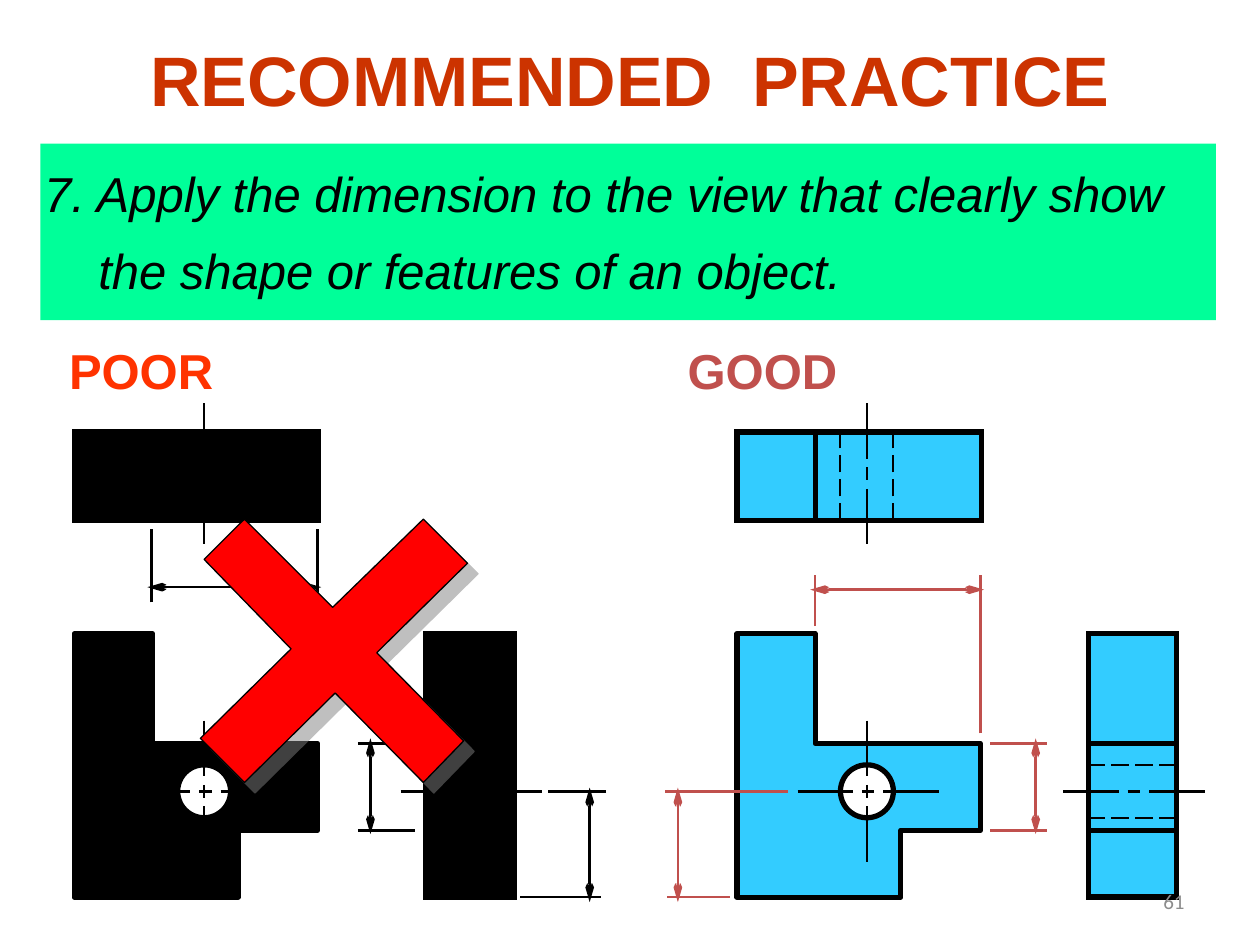
"""Build the slide that contrasts poor and good placement of dimensions."""
from dataclasses import dataclass
from typing import NamedTuple

from lxml.etree import SubElement
from pptx import Presentation
from pptx.dml.color import RGBColor
from pptx.enum.dml import MSO_LINE
from pptx.enum.shapes import MSO_CONNECTOR, MSO_SHAPE
from pptx.enum.text import MSO_ANCHOR, MSO_AUTO_SIZE, PP_ALIGN
from pptx.oxml.ns import qn
from pptx.util import Pt

PX = 9144


@dataclass(frozen=True)
class Theme:
    black: str = "000000"
    white: str = "FFFFFF"
    banner: str = "00FF99"
    workpiece: str = "33CCFF"
    title: str = "CC3300"
    poor: str = "FF3300"
    good: str = "C0504D"
    cross: str = "FF0000"
    shadow: str = "808080"
    number: str = "8C8C8C"
    font: str = "Arial"
    number_font: str = "Calibri"
    title_size: int = 40
    text_size: int = 28
    number_size: int = 12


class Box(NamedTuple):
    left: int
    top: int
    width: int
    height: int

    def emu(self, dx: int = 0) -> tuple:
        return (self.left + dx) * PX, self.top * PX, self.width * PX, self.height * PX


class Segment(NamedTuple):
    x1: int
    y1: int
    x2: int
    y2: int


class Pen(NamedTuple):
    color: str
    weight: float = 1.5
    dashed: bool = False
    arrows: bool = False


class Dimension(NamedTuple):
    measure: Segment
    extensions: tuple


class Lettering(NamedTuple):
    size: int
    color: str
    font: str
    bold: bool = False
    italic: bool = False


THEME = Theme()
EDGE = Pen(THEME.black, 3)
HIDDEN = Pen(THEME.black, 1.25, dashed=True)
CENTRE = Pen(THEME.black)

FRONT = ((59, 503), (121, 503), (121, 590), (252, 590), (252, 659),
         (189, 659), (189, 712), (59, 712))
PLAN = Box(59, 343, 194, 70)
SIDE = Box(338, 503, 70, 209)
HOLE = Box(141, 607, 42, 42)
GOOD_OFFSET = 526

EDGES = (Segment(121, 411, 121, 343), Segment(337, 590, 407, 590), Segment(337, 659, 407, 659))
HIDDEN_LINES = (Segment(337, 649, 407, 649), Segment(337, 607, 407, 607),
                Segment(183, 413, 183, 342), Segment(141, 413, 141, 342))
CENTRE_DASHES = ((-56, -12), (-5, 5), (12, 56))
HORIZONTAL_CENTRES = ((163, 628), (374, 628))
VERTICAL_CENTRES = ((162, 628), (162, 376))

POOR_DIMENSIONS = (
    Dimension(Segment(468, 625, 468, 716),
              (Segment(481, 628, 435, 628), Segment(477, 712, 413, 712))),
    Dimension(Segment(255, 466, 117, 466),
              (Segment(120, 478, 120, 420), Segment(252, 478, 252, 420))),
    Dimension(Segment(294, 586, 294, 662),
              (Segment(284, 590, 329, 590), Segment(284, 659, 329, 659))),
)
GOOD_DIMENSIONS = (
    Dimension(Segment(781, 468, 643, 468),
              (Segment(647, 497, 647, 456), Segment(778, 582, 778, 456))),
    Dimension(Segment(822, 586, 822, 662),
              (Segment(786, 590, 831, 590), Segment(786, 659, 831, 659))),
    Dimension(Segment(538, 625, 538, 716),
              (Segment(579, 712, 529, 712), Segment(625, 628, 528, 628))),
)
CROSS = ((162, 444), (231, 515), (159, 586), (194, 621), (266, 550), (336, 621),
         (368, 588), (299, 518), (371, 447), (336, 412), (264, 482), (194, 412))


def rgb(color: str) -> RGBColor:
    return RGBColor.from_string(color)


def paint(shape, fill: str, weight: float = 3, mitred: bool = False) -> None:
    shape.shadow.inherit = False
    shape.fill.solid()
    shape.fill.fore_color.rgb = rgb(fill)
    shape.line.color.rgb = rgb(THEME.black)
    shape.line.width = Pt(weight)
    if mitred:
        SubElement(shape.line._get_or_add_ln(), qn("a:miter"), lim="800000")


def draw_line(shapes, segment: Segment, pen: Pen, dx: int = 0) -> None:
    x1, y1, x2, y2 = segment
    stroke = shapes.add_connector(MSO_CONNECTOR.STRAIGHT, (x1 + dx) * PX, y1 * PX,
                                  (x2 + dx) * PX, y2 * PX)
    stroke.line.color.rgb = rgb(pen.color)
    stroke.line.width = Pt(pen.weight)
    if pen.dashed:
        stroke.line.dash_style = MSO_LINE.LONG_DASH
    if pen.arrows:
        for end in ("a:headEnd", "a:tailEnd"):
            SubElement(stroke.line._get_or_add_ln(), qn(end), type="arrow", w="sm", len="lg")
    SubElement(stroke._element.spPr, qn("a:effectLst"))


def draw_outline(shapes, points: tuple, dx: int = 0):
    (start_x, start_y), *rest = [(x + dx, y) for x, y in points]
    outline = shapes.build_freeform(start_x, start_y, scale=PX)
    outline.add_line_segments(rest, close=True)
    return outline.convert_to_shape()


def draw_views(shapes, fill: str, dx: int = 0) -> None:
    paint(draw_outline(shapes, FRONT, dx), fill)
    for view in (PLAN, SIDE):
        paint(shapes.add_shape(MSO_SHAPE.RECTANGLE, *view.emu(dx)), fill, mitred=True)
    paint(shapes.add_shape(MSO_SHAPE.OVAL, *HOLE.emu(dx)), THEME.white)
    for segments, pen in ((EDGES, EDGE), (HIDDEN_LINES, HIDDEN)):
        for segment in segments:
            draw_line(shapes, segment, pen, dx)
    for start, end in CENTRE_DASHES:
        for x, y in HORIZONTAL_CENTRES:
            draw_line(shapes, Segment(x + start, y, x + end, y), CENTRE, dx)
        for x, y in VERTICAL_CENTRES:
            draw_line(shapes, Segment(x, y + start, x, y + end), CENTRE, dx)


def draw_dimension(shapes, dimension: Dimension, color: str) -> None:
    for extension in dimension.extensions:
        draw_line(shapes, extension, Pen(color))
    draw_line(shapes, dimension.measure, Pen(color, arrows=True))


def draw_cross(shapes) -> None:
    cross = draw_outline(shapes, CROSS)
    paint(cross, THEME.cross, 0.75)
    effects = cross._element.spPr.find(qn("a:effectLst"))
    shadow = SubElement(effects, qn("a:outerShdw"), dist=str(Pt(8.5)), dir="2700000",
                        algn="ctr", rotWithShape="0")
    tint = SubElement(shadow, qn("a:srgbClr"), val=THEME.shadow)
    SubElement(tint, qn("a:alpha"), val="50000")


def write(holder, box: Box, text: str, style: Lettering, align=PP_ALIGN.LEFT,
          anchor=MSO_ANCHOR.TOP, wrap: bool = True):
    holder.left, holder.top, holder.width, holder.height = box.emu()
    frame = holder.text_frame
    frame.text = text
    frame.word_wrap = wrap
    frame.auto_size = MSO_AUTO_SIZE.NONE
    frame.vertical_anchor = anchor
    paragraph = frame.paragraphs[0]
    paragraph.alignment = align
    for run in paragraph.runs:
        run.font.name, run.font.size = style.font, Pt(style.size)
        run.font.bold, run.font.italic = style.bold, style.italic
        run.font.color.rgb = rgb(style.color)
    return frame


def write_rule(body) -> None:
    body.fill.solid()
    body.fill.fore_color.rgb = rgb(THEME.banner)
    frame = write(body, Box(32, 114, 933, 140),
                  "7. Apply the dimension to the view that clearly show\v"
                  "the shape or features of an object.",
                  Lettering(THEME.text_size, THEME.black, THEME.font, italic=True))
    frame.margin_left, frame.margin_top = 3 * PX, 2 * PX
    rule = frame.paragraphs[0]
    rule.line_spacing, rule.space_before = 1.3, Pt(0)
    properties = rule._p.get_or_add_pPr()
    properties.set("marL", str(43 * PX))
    properties.set("indent", str(-43 * PX))
    SubElement(properties, qn("a:buNone"))


def main() -> None:
    deck = Presentation()
    deck.slide_width, deck.slide_height = 1000 * PX, 750 * PX
    slide = deck.slides.add_slide(deck.slide_layouts[1])
    shapes = slide.shapes
    write(shapes.title, Box(75, 0, 850, 125), "RECOMMENDED  PRACTICE",
          Lettering(THEME.title_size, THEME.title, THEME.font, bold=True),
          PP_ALIGN.CENTER, MSO_ANCHOR.MIDDLE)
    write_rule(slide.placeholders[1])
    for dimensions, color, fill, dx in ((POOR_DIMENSIONS, THEME.black, THEME.black, 0),
                                        (GOOD_DIMENSIONS, THEME.good, THEME.workpiece, GOOD_OFFSET)):
        draw_views(shapes, fill, dx)
        for dimension in dimensions:
            draw_dimension(shapes, dimension, color)
    for verdict, box, color in (("POOR", Box(45, 265, 136, 57), THEME.poor),
                                ("GOOD", Box(536, 265, 140, 57), THEME.good)):
        write(shapes.add_textbox(*box.emu()), box, verdict,
              Lettering(THEME.text_size, color, THEME.font, bold=True), wrap=False)
    draw_cross(shapes)
    page = Box(717, 695, 233, 40)
    write(shapes.add_textbox(*page.emu()), page, "61",
          Lettering(THEME.number_size, THEME.number, THEME.number_font),
          PP_ALIGN.RIGHT, MSO_ANCHOR.MIDDLE)
    deck.save("out.pptx")


if __name__ == "__main__":
    main()
